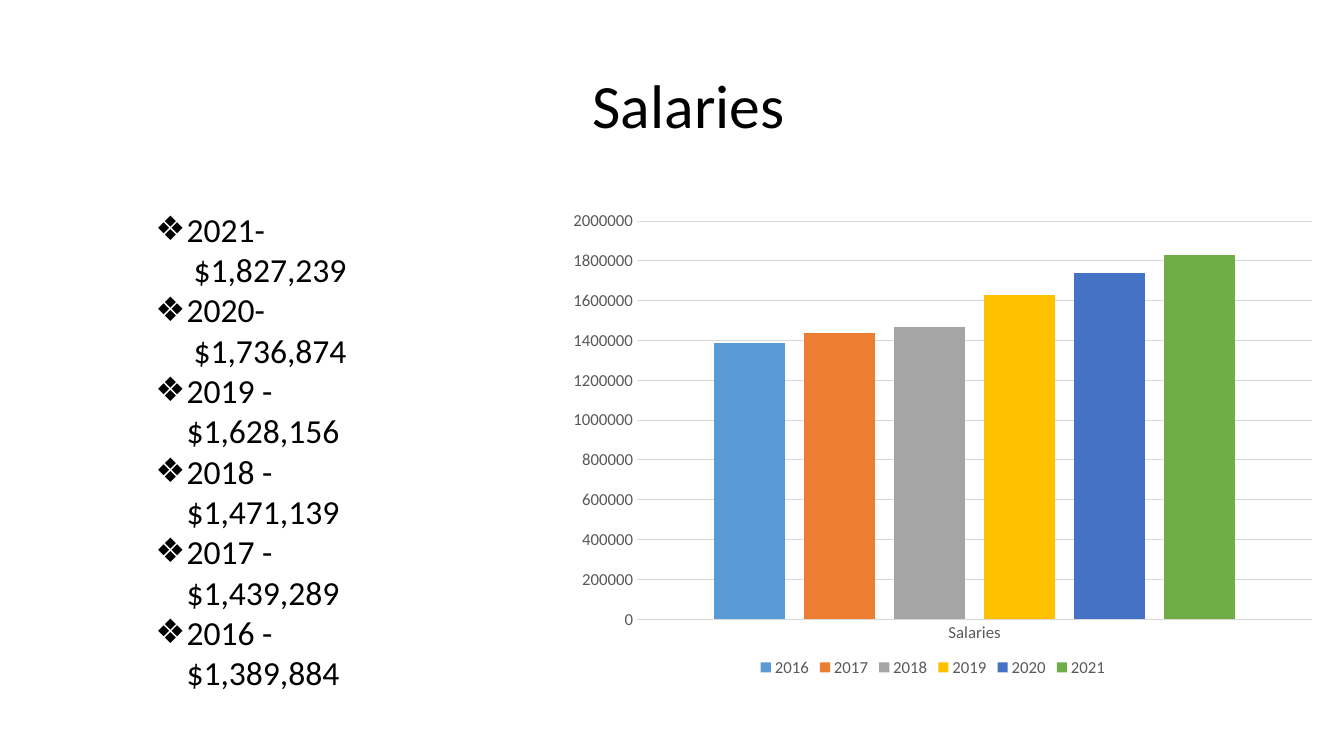
"""Build the salaries slide: a bulleted list beside a column chart."""
from lxml import etree
from pptx import Presentation
from pptx.chart.data import CategoryChartData
from pptx.dml.color import RGBColor
from pptx.enum.chart import XL_CHART_TYPE, XL_LEGEND_POSITION, XL_TICK_MARK
from pptx.enum.text import MSO_ANCHOR, MSO_AUTO_SIZE, PP_ALIGN
from pptx.oxml import parse_xml
from pptx.oxml.ns import nsdecls, qn
from pptx.util import Inches, Pt

COLUMN = XL_CHART_TYPE.COLUMN_CLUSTERED
BOTTOM = XL_LEGEND_POSITION.BOTTOM
NO_TICK = XL_TICK_MARK.NONE
CENTER = PP_ALIGN.CENTER
LEFT = PP_ALIGN.LEFT
TOP = MSO_ANCHOR.TOP
MIDDLE = MSO_ANCHOR.MIDDLE
NO_FIT = MSO_AUTO_SIZE.NONE

TITLE = "Salaries"
FONT = "Calibri"
LINES = [
    ("❖", "2021-"),
    ("", "$1,827,239"),
    ("❖", "2020-"),
    ("", "$1,736,874"),
    ("❖", "2019 - $1,628,156"),
    ("❖", "2018 - $1,471,139"),
    ("❖", "2017 - $1,439,289"),
    ("❖", "2016 - $1,389,884"),
]
SERIES = [
    ("2016", 1390000, "blue"),
    ("2017", 1440000, "orange"),
    ("2018", 1470000, "gray"),
    ("2019", 1630000, "gold"),
    ("2020", 1740000, "navy"),
    ("2021", 1830000, "green"),
]
COLORS = {
    "text": "000000", "label": "595959", "grid": "D9D9D9",
    "blue": "5B9BD5", "orange": "ED7D31", "gray": "A5A5A5",
    "gold": "FFC000", "navy": "4472C4", "green": "70AD47",
}
PLOT = {"x": 0.11, "y": 0.11, "w": 0.89, "h": 0.77}


def color(name):
    return RGBColor.from_string(COLORS[name])


def style(font, size, name="text"):
    font.name, font.size = FONT, Pt(size)
    font.color.rgb = color(name)


def place(shape, left, top, width, height):
    shape.left, shape.top = Inches(left), Inches(top)
    shape.width, shape.height = Inches(width), Inches(height)


def indent(para, mark):
    props = para._p.get_or_add_pPr()
    props.set("marL", str(Inches(0.31 if mark else 0.38)))
    props.set("indent", str(Inches(-0.31 if mark else 0)))
    if mark:
        etree.SubElement(props, qn("a:buChar")).set("char", mark)
    else:
        etree.SubElement(props, qn("a:buNone"))


def add_title(slide):
    shape = slide.shapes.title
    place(shape, 0.46, 0.61, 12.74, 0.84)
    frame = shape.text_frame
    frame.text = TITLE
    frame.auto_size, frame.vertical_anchor = NO_FIT, MIDDLE
    frame.paragraphs[0].alignment = CENTER
    style(frame.paragraphs[0].runs[0].font, 44)


def add_list(slide):
    shape = slide.placeholders[1]
    place(shape, 1.44, 2.02, 2.94, 5.76)
    frame = shape.text_frame
    frame.text = "\n".join(text for _, text in LINES)
    frame.word_wrap, frame.auto_size = True, NO_FIT
    frame.vertical_anchor = TOP
    for para, (mark, _) in zip(frame.paragraphs, LINES):
        para.alignment = LEFT
        para.space_before = Pt(0)
        indent(para, mark)
        style(para.runs[0].font, 24)


def set_plot(chart):
    area = chart._chartSpace.chart.plotArea
    for old in area.findall(qn("c:layout")):
        area.remove(old)
    parts = "".join(f'<c:{key} val="{val}"/>' for key, val in PLOT.items())
    area.insert(0, parse_xml(
        f'<c:layout {nsdecls("c")}><c:manualLayout>'
        '<c:layoutTarget val="inner"/><c:xMode val="edge"/>'
        f'<c:yMode val="edge"/>{parts}</c:manualLayout></c:layout>'))


def add_chart(slide):
    data = CategoryChartData(number_format="General")
    data.categories = [TITLE]
    for name, value, _ in SERIES:
        data.add_series(name, [value])
    box = [Inches(n) for n in (5.49, 1.63, 7.53, 5.13)]
    chart = slide.shapes.add_chart(COLUMN, *box, data).chart
    chart.has_title = False
    style(chart.font, 10)
    chart.has_legend = True
    chart.legend.position = BOTTOM
    chart.legend.include_in_layout = False
    style(chart.legend.font, 12, "label")

    plot = chart.plots[0]
    plot.gap_width, plot.overlap = 219, -27
    plot.vary_by_categories = False
    for bar, (_, _, name) in zip(plot.series, SERIES):
        bar.format.fill.solid()
        bar.format.fill.fore_color.rgb = color(name)

    cats, vals = chart.category_axis, chart.value_axis
    for axis in (cats, vals):
        axis.major_tick_mark = axis.minor_tick_mark = NO_TICK
        style(axis.tick_labels.font, 12, "label")
    vals.minimum_scale, vals.maximum_scale = 0, 2000000
    vals.major_unit = 200000
    vals.has_major_gridlines = True
    vals.format.line.fill.background()
    for line in (cats.format.line, vals.major_gridlines.format.line):
        line.color.rgb, line.width = color("grid"), Pt(0.75)
    set_plot(chart)


def main():
    deck = Presentation()
    deck.slide_width, deck.slide_height = Inches(13.33), Inches(7.5)
    slide = deck.slides.add_slide(deck.slide_layouts[1])
    add_title(slide)
    add_list(slide)
    add_chart(slide)
    deck.save("out.pptx")


if __name__ == "__main__":
    main()
